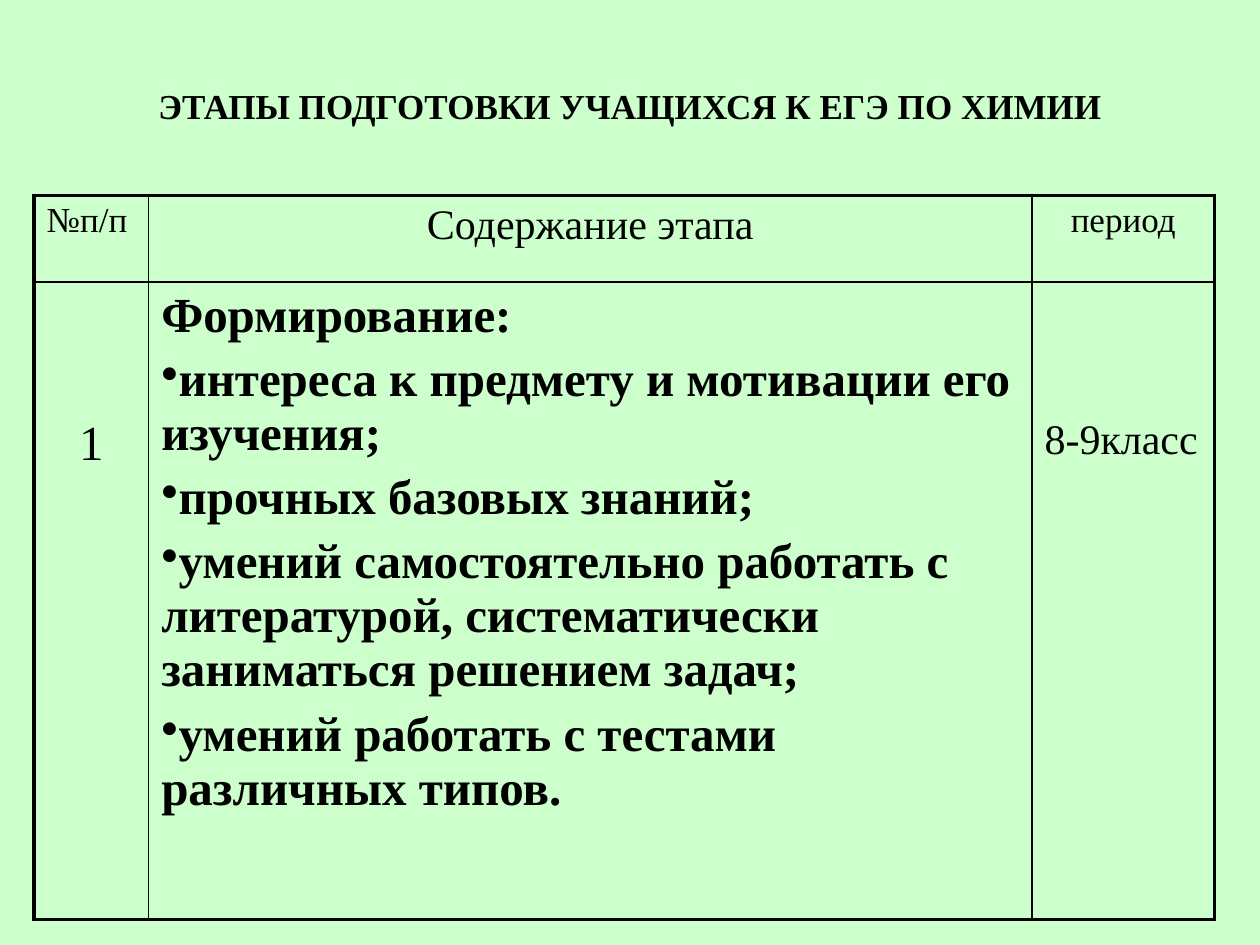
from dataclasses import dataclass
from lxml import etree
from pptx import Presentation, util as u
from pptx.dml.color import RGBColor
from pptx.enum import text
from pptx.oxml.ns import qn


@dataclass(frozen=True)
class Theme:
    font: str = "Times New Roman"
    ink: str = "000000"
    paper: str = "CDFFCD"
    small: int = 20
    medium: int = 24
    large: int = 28
    outer: float = 2.25
    inner: float = 1


THEME = Theme()
HEADING = "ЭТАПЫ ПОДГОТОВКИ УЧАЩИХСЯ К ЕГЭ ПО ХИМИИ"
GOALS_INTRO = "Формирование:"
GOALS = [
    "интереса к предмету и мотивации его изучения;",
    "прочных базовых знаний;",
    "умений самостоятельно работать с литературой, систематически заниматься решением задач;",
    "умений работать с тестами различных типов.",
]
LEFT, CENTER = text.PP_ALIGN.LEFT, text.PP_ALIGN.CENTER
TOP_MARGIN, LOWERED_MARGIN = 0.05, 1.07
STAGES = [
    [
        (["№п/п"], THEME.small, LEFT, False, TOP_MARGIN),
        (["Содержание этапа"], THEME.medium, CENTER, False, TOP_MARGIN),
        (["период"], THEME.small, CENTER, False, TOP_MARGIN),
    ],
    [
        (["1"], THEME.large, CENTER, False, LOWERED_MARGIN),
        ([GOALS_INTRO, *GOALS], THEME.large, LEFT, True, TOP_MARGIN),
        (["8-9класс"], THEME.medium, LEFT, False, LOWERED_MARGIN),
    ],
]
COLUMNS = [0.91, 7.01, 1.45]
ROWS = [0.69, 5.06]


def style(paragraph, size, align, bold):
    paragraph.alignment = align
    font = paragraph.font
    font.name, font.size, font.bold = THEME.font, u.Pt(size), bold
    font.color.rgb = RGBColor.from_string(THEME.ink)


def add_bullet(paragraph):
    props = paragraph._p.get_or_add_pPr()
    props.set("marL", "0")
    props.set("indent", "0")
    etree.SubElement(props, qn("a:buChar"), char="•")


def add_borders(cell, row, column):
    edges = {
        "L": column == 0,
        "R": column == len(COLUMNS) - 1,
        "T": row == 0,
        "B": row == len(ROWS) - 1,
    }
    props = cell._tc.get_or_add_tcPr()
    for side, is_outer in edges.items():
        width = u.Pt(THEME.outer if is_outer else THEME.inner)
        line = etree.SubElement(props, qn(f"a:ln{side}"), w=str(int(width)))
        fill = etree.SubElement(line, qn("a:solidFill"))
        etree.SubElement(fill, qn("a:srgbClr"), val=THEME.ink)


def fill_cell(cell, lines, size, align, bold, margin):
    cell.margin_top = u.Inches(margin)
    frame = cell.text_frame
    for index, line in enumerate(lines):
        paragraph = frame.add_paragraph() if index else frame.paragraphs[0]
        paragraph.text = line
        if index:
            paragraph.space_before = u.Pt(size * 0.2)
        if line in GOALS:
            add_bullet(paragraph)
        style(paragraph, size, align, bold)


def main():
    deck = Presentation()
    deck.slide_width, deck.slide_height = u.Inches(10), u.Inches(7.5)
    slide = deck.slides.add_slide(deck.slide_layouts[5])
    slide.background.fill.solid()
    slide.background.fill.fore_color.rgb = RGBColor.from_string(THEME.paper)

    title = slide.shapes.title
    title.left, title.top = u.Inches(0.5), u.Inches(0.21)
    title.width, title.height = u.Inches(9), u.Inches(1.25)
    title.text_frame.text = HEADING
    title.text_frame.vertical_anchor = text.MSO_ANCHOR.MIDDLE
    style(title.text_frame.paragraphs[0], THEME.small, CENTER, True)

    stages = slide.shapes.add_table(
        len(ROWS), len(COLUMNS), u.Inches(0.27), u.Inches(1.55),
        u.Inches(sum(COLUMNS)), u.Inches(sum(ROWS)),
    ).table
    stages.first_row = stages.horz_banding = False
    for column, width in zip(stages.columns, COLUMNS):
        column.width = u.Inches(width)
    for row, height in zip(stages.rows, ROWS):
        row.height = u.Inches(height)
    for r, entries in enumerate(STAGES):
        for c, entry in enumerate(entries):
            cell = stages.cell(r, c)
            fill_cell(cell, *entry)
            add_borders(cell, r, c)
            cell.fill.background()

    deck.save("out.pptx")


if __name__ == "__main__":
    main()
